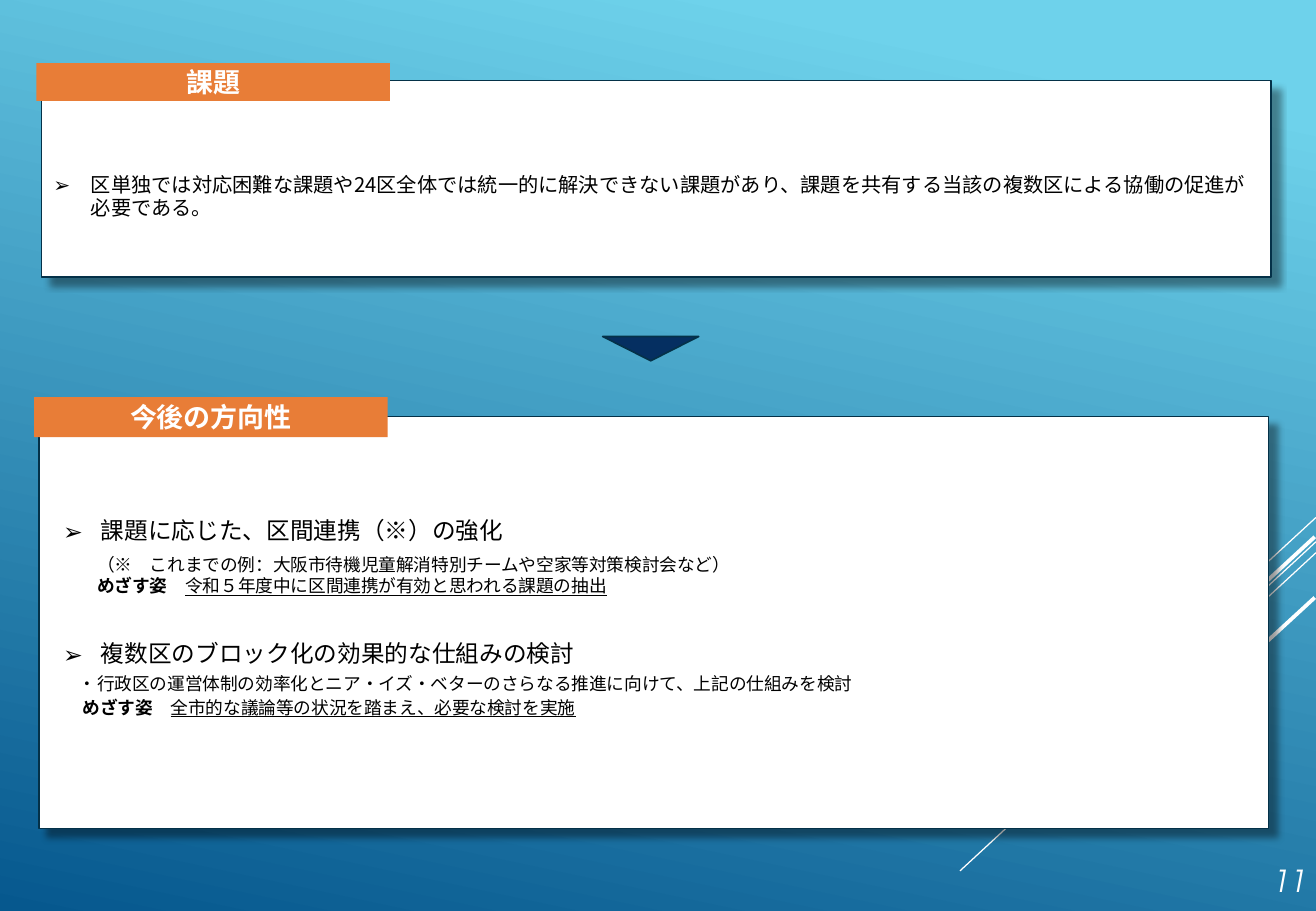
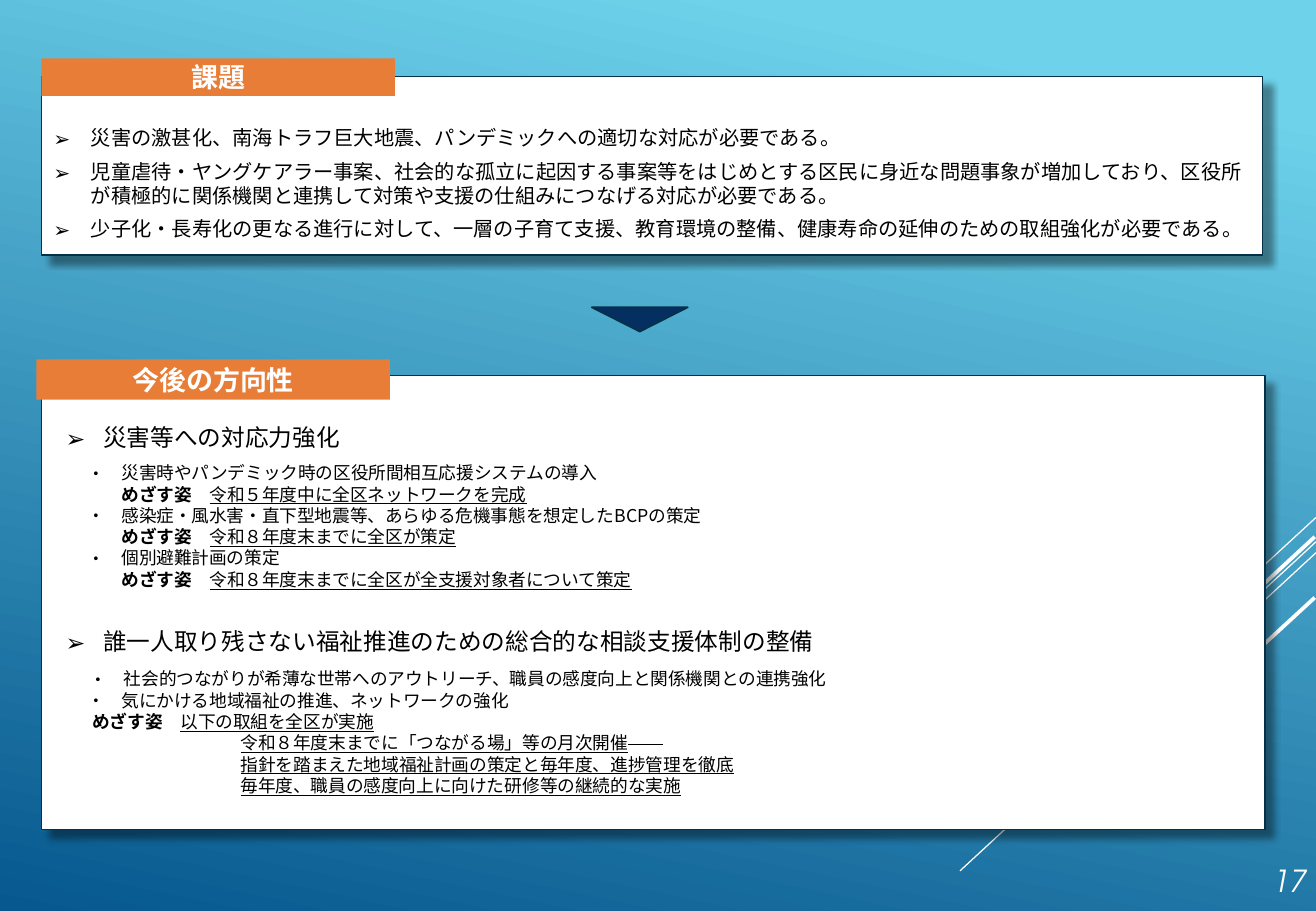
"""Build two slides on ward issues and future directions."""
from lxml import etree
from pptx import Presentation, util as u
from pptx.dml.color import RGBColor
from pptx.enum import shapes, text
from pptx.oxml import ns

PX = 9144
COLORS = {"sky": "6ED2EB", "deep": "06588E", "white": "FFFFFF", "black": "000000",
          "edge": "043148", "navy": "052F61", "orange": "E87D37"}
FONT, NUMBER_FONT = "Noto Sans CJK JP", "TeX Gyre Adventor"
RAYS = [(1083, 426, 993, 509, 0.75), (1083, 446, 790, 717, 0.75), (1083, 455, 897, 627, 0.75),
        (1082, 442, 912, 599, 2.25), (1082, 492, 958, 606, 2.25)]


def px(n):
    """Turn px into EMU."""
    return u.Emu(n * PX)


def rgb(name):
    """Look up a colour."""
    return RGBColor.from_string(COLORS[name])


def sub(parent, tag, **attrs):
    """Append a drawing element."""
    return etree.SubElement(parent, ns.qn(tag), **attrs)


class Deck:
    """Hold the style and the current slide."""

    def __init__(self):
        """Open an empty presentation."""
        self.prs = Presentation()
        self.prs.slide_width, self.prs.slide_height = px(1083), px(750)

    def slide(self, number):
        """Start a slide with background, rays and page number."""
        self.s = self.prs.slides.add_slide(self.prs.slide_layouts[6])
        fill = self.s.background.fill
        fill.gradient()
        fill.gradient_angle = 258
        for stop, position, color in zip(fill.gradient_stops, (0.1, 1), ("sky", "deep")):
            stop.position, stop.color.rgb = position, rgb(color)
        for ray in RAYS:
            self.ray(*ray)
        sp = self.s.shapes.add_textbox(px(832), px(705), px(253), px(40))
        tf = self.frame(sp, text.MSO_ANCHOR.BOTTOM, (10, 5, 10, 5))
        p = tf.paragraphs[0]
        p.alignment = text.PP_ALIGN.RIGHT
        self.run(p, number, 18, "white", font=NUMBER_FONT, italic=True)

    def ray(self, x1, y1, x2, y2, width):
        """Draw a white line."""
        c = self.s.shapes.add_connector(shapes.MSO_CONNECTOR.STRAIGHT, px(x1), px(y1), px(x2), px(y2))
        c.line.color.rgb, c.line.width = rgb("white"), u.Pt(width)
        sub(c._element.spPr, "a:effectLst")

    def shape(self, kind, x, y, w, h, fill, line=None):
        """Draw a filled preset shape."""
        sp = self.s.shapes.add_shape(kind, px(x), px(y), px(w), px(h))
        sp.shadow.inherit = False
        sp.fill.solid()
        sp.fill.fore_color.rgb = rgb(fill)
        if line:
            sp.line.color.rgb, sp.line.width = rgb("edge"), u.Pt(line)
        else:
            sp.line.fill.background()
        return sp

    def frame(self, sp, anchor, insets):
        """Set up a text frame."""
        tf = sp.text_frame
        tf.word_wrap, tf.vertical_anchor = True, anchor
        tf.margin_left, tf.margin_top, tf.margin_right, tf.margin_bottom = map(px, insets)
        return tf

    def run(self, p, words, size, color="black", font=FONT, bold=False, italic=False,
            underline=False, strike=False):
        """Add one run."""
        r = p.add_run()
        r.text = words
        f = r.font
        f.size, f.bold, f.italic, f.underline = u.Pt(size), bold, italic, underline
        f.color.rgb, f.name = rgb(color), font
        rPr = r._r.get_or_add_rPr()
        sub(rPr, "a:ea", typeface=font)
        if strike:
            rPr.set("strike", "sngStrike")

    def panel(self, x, y, w, h, left, top):
        """Draw a white box with a shadow and open its text."""
        sp = self.shape(shapes.MSO_SHAPE.RECTANGLE, x, y, w, h, "white", 0.75)
        effects = sp._element.spPr.find(ns.qn("a:effectLst"))
        shadow = sub(effects, "a:outerShdw", blurRad=str(u.Pt(4)), dist=str(u.Pt(7)),
                     dir="2700000", algn="tl", rotWithShape="0")
        sub(sub(shadow, "a:srgbClr", val=COLORS["black"]), "a:alpha", val="40000")
        self.tf = self.frame(sp, text.MSO_ANCHOR.TOP, (left, top, 10, 0))

    def para(self, indent, line, before=0, bullet=None, hang=0):
        """Add a left-aligned paragraph to the open panel."""
        p = self.tf.paragraphs[0]
        if p.runs:
            p = self.tf.add_paragraph()
        p.alignment = text.PP_ALIGN.LEFT
        p.line_spacing, p.space_before, p.space_after = u.Pt(line), u.Pt(before), u.Pt(0)
        pPr = p._p.get_or_add_pPr()
        pPr.set("marL", str(px(indent)))
        pPr.set("indent", str(px(-hang)))
        if bullet:
            sub(pPr, "a:buFont", typeface=FONT)
            sub(pPr, "a:buChar", char=bullet)
        return p

    def issue(self, words):
        """Add an arrow-bulleted issue."""
        self.run(self.para(31, 14, 6, "➢", 31), words, 12)

    def heading(self, words, before=0):
        """Add an arrow-bulleted direction."""
        self.run(self.para(51, 14, before, "➢", 31), words, 14)

    def note(self, words, indent, before=0, hang=0):
        """Add a small line, dotted when it hangs."""
        self.run(self.para(indent, 12.6, before, "・" if hang else None, hang), words, 10.5)

    def goal(self, words, indent, before=0, label="めざす姿　", tail=""):
        """Add an underlined goal."""
        p = self.para(indent, 12.6, before)
        if label:
            self.run(p, label, 10.5, bold=True)
        self.run(p, words, 10.5, underline=True)
        if tail:
            self.run(p, tail, 10.5, strike=True)

    def tag(self, words, x, y, h):
        """Draw an orange title band."""
        sp = self.shape(shapes.MSO_SHAPE.RECTANGLE, x, y, 291, h, "orange")
        p = self.frame(sp, text.MSO_ANCHOR.MIDDLE, (10, 0, 10, 0)).paragraphs[0]
        p.alignment, p.line_spacing = text.PP_ALIGN.CENTER, u.Pt(19)
        self.run(p, words, 16, "white", bold=True)

    def tags(self, issue_at, direction_at):
        """Draw both title bands."""
        self.tag("課題", *issue_at, 31)
        self.tag("今後の方向性", *direction_at, 33)

    def pointer(self, x, y):
        """Draw the downward triangle."""
        self.shape(shapes.MSO_SHAPE.ISOSCELES_TRIANGLE, x, y, 79, 20, "navy", 1).rotation = 180


def cooperation(d):
    """Build the slide on cooperation between wards."""
    d.slide("11")
    d.panel(34, 66, 1012, 162, 10, 76)
    d.issue("区単独では対応困難な課題や24区全体では統一的に解決できない課題があり、課題を共有する当該の複数区による協働の促進が必要である。")
    d.pointer(496, 277)
    d.panel(32, 343, 1012, 339, 0, 86)
    d.heading("課題に応じた、区間連携（※）の強化")
    d.note("（※　これまでの例：大阪市待機児童解消特別チームや空家等対策検討会など）", 48, 5.5)
    d.goal("令和５年度中に区間連携が有効と思われる課題の抽出", 48)
    d.heading("複数区のブロック化の効果的な仕組みの検討", 28)
    d.note("行政区の運営体制の効率化とニア・イズ・ベターのさらなる推進に向けて、上記の仕組みを検討", 48, 3, 15)
    d.goal("全市的な議論等の状況を踏まえ、必要な検討を実施", 36, 1.5)
    d.tags((30, 52), (28, 327))


def safety(d):
    """Build the slide on disaster response and welfare."""
    d.slide("17")
    d.panel(34, 63, 1005, 147, 10, 41)
    for words in ("災害の激甚化、南海トラフ巨大地震、パンデミックへの適切な対応が必要である。",
                  "児童虐待・ヤングケアラー事案、社会的な孤立に起因する事案等をはじめとする区民に身近な問題事象が増加しており、区役所が積極的に関係機関と連携して対策や支援の仕組みにつなげる対応が必要である。",
                  "少子化・長寿化の更なる進行に対して、一層の子育て支援、教育環境の整備、健康寿命の延伸のための取組強化が必要である。"):
        d.issue(words)
    d.panel(34, 309, 1007, 374, 0, 43)
    d.heading("災害等への対応力強化")
    for before, plan, goal in (
            (6.5, "災害時やパンデミック時の区役所間相互応援システムの導入", "令和５年度中に全区ネットワークを完成"),
            (0, "感染症・風水害・直下型地震等、あらゆる危機事態を想定したBCPの策定", "令和８年度末までに全区が策定"),
            (0, "個別避難計画の策定", "令和８年度末までに全区が全支援対象者について策定")):
        d.note(plan, 66, before, 28)
        d.goal(goal, 66)
    d.heading("誰一人取り残さない福祉推進のための総合的な相談支援体制の整備", 25)
    d.note("社会的つながりが希薄な世帯へのアウトリーチ、職員の感度向上と関係機関との連携強化", 68, 7.5, 28)
    d.note("気にかける地域福祉の推進、ネットワークの強化", 66, 0, 28)
    d.goal("以下の取組を全区が実施", 42)
    for words, tail in (("令和８年度末までに「つながる場」等の月次開催", "　　"),
                        ("指針を踏まえた地域福祉計画の策定と毎年度、進捗管理を徹底", ""),
                        ("毎年度、職員の感度向上に向けた研修等の継続的な実施", "")):
        d.goal(words, 164, label="", tail=tail)
    d.pointer(487, 253)
    d.tags((34, 48), (30, 296))


def main():
    """Build and save the deck."""
    d = Deck()
    cooperation(d)
    safety(d)
    d.prs.save("out.pptx")


if __name__ == "__main__":
    main()
